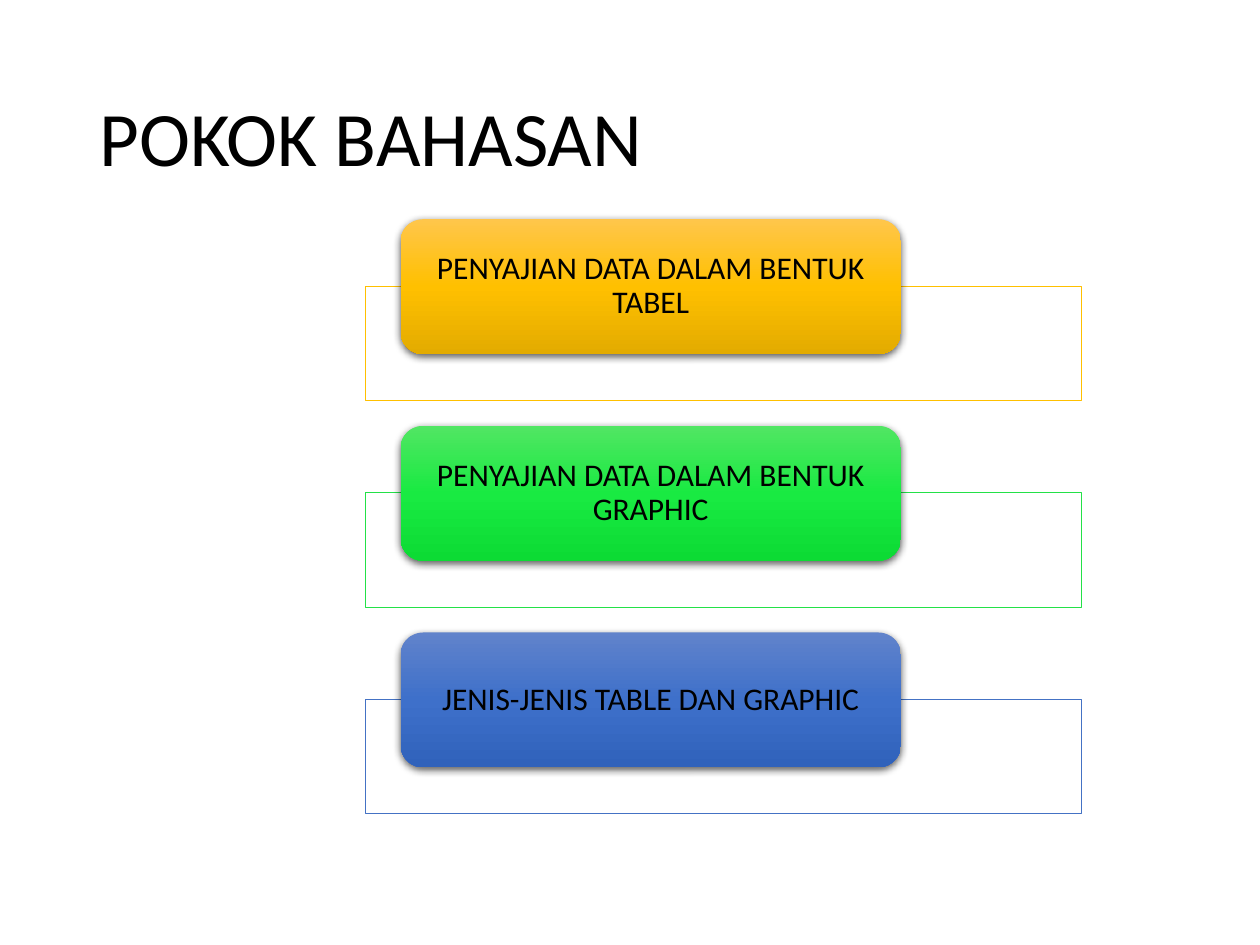
from lxml import etree
from pptx import Presentation
from pptx.dml.color import RGBColor
from pptx.enum.shapes import MSO_SHAPE
from pptx.enum.text import MSO_ANCHOR, PP_ALIGN
from pptx.oxml.ns import qn
from pptx.util import Inches, Pt

RECTANGLE = MSO_SHAPE.RECTANGLE
ROUNDED = MSO_SHAPE.ROUNDED_RECTANGLE
MIDDLE = MSO_ANCHOR.MIDDLE
LEFT, CENTER = PP_ALIGN.LEFT, PP_ALIGN.CENTER

TOPICS = [
    ("PENYAJIAN DATA DALAM BENTUK TABEL", "FFC000", ["FFC64B", "FFC000", "E3AB00"]),
    ("PENYAJIAN DATA DALAM BENTUK GRAPHIC", "23E148", ["51E663", "19EA42", "0CDB34"]),
    ("JENIS-JENIS TABLE DAN GRAPHIC", "4472C4", ["6183CB", "3E70CA", "3062BB"]),
]
FIRST_TOP, STEP = 1.74, 1.64


def color(value):
    return RGBColor.from_string(value)


def write(shape, text, size, align, margin_x, margin_y):
    frame = shape.text_frame
    frame.word_wrap = True
    frame.vertical_anchor = MIDDLE
    frame.margin_left = frame.margin_right = Inches(margin_x)
    frame.margin_top = frame.margin_bottom = Inches(margin_y)
    frame.text = text
    paragraph = frame.paragraphs[0]
    paragraph.alignment = align
    paragraph.line_spacing = 0.9
    font = paragraph.runs[0].font
    font.name = "Calibri"
    font.size = Pt(size)
    font.color.rgb = color("000000")


presentation = Presentation()
presentation.slide_width = Inches(10)
presentation.slide_height = Inches(7.5)
slide = presentation.slides.add_slide(presentation.slide_layouts[5])

title = slide.shapes.title
title.left, title.top = Inches(0.69), Inches(0.4)
title.width, title.height = Inches(8.62), Inches(1.45)
write(title, "POKOK BAHASAN", size=44, align=LEFT, margin_x=0.1, margin_y=0.05)

for index, (text, outline, gradient) in enumerate(TOPICS):
    top = FIRST_TOP + index * STEP

    frame_box = slide.shapes.add_shape(
        RECTANGLE, Inches(2.9), Inches(top + 0.53), Inches(5.68), Inches(0.91))
    frame_box.shadow.inherit = False
    frame_box.fill.solid()
    frame_box.fill.fore_color.rgb = color("FFFFFF")
    fill_color = frame_box._element.spPr.find(qn("a:solidFill"))[0]
    etree.SubElement(fill_color, qn("a:alpha"), val="90000")
    frame_box.line.color.rgb = color(outline)
    frame_box.line.width = Pt(0.5)

    label = slide.shapes.add_shape(
        ROUNDED, Inches(3.18), Inches(top), Inches(3.97), Inches(1.07))
    label.line.fill.background()
    label.fill.gradient()
    label.fill.gradient_angle = 270
    properties = label._element.spPr
    stops = properties.find(qn("a:gradFill")).find(qn("a:gsLst"))
    for stop in list(stops):
        stops.remove(stop)
    for position, stop_color in zip((0, 50000, 100000), gradient):
        stop = etree.SubElement(stops, qn("a:gs"), pos=str(position))
        etree.SubElement(stop, qn("a:srgbClr"), val=stop_color)

    label.shadow.inherit = False
    shadow = etree.SubElement(
        properties.find(qn("a:effectLst")), qn("a:outerShdw"),
        blurRad=str(Pt(4.5)), dist=str(Pt(1.5)), dir="5400000",
        algn="ctr", rotWithShape="0")
    shadow_color = etree.SubElement(shadow, qn("a:srgbClr"), val="000000")
    etree.SubElement(shadow_color, qn("a:alpha"), val="63000")

    write(label, text, size=18, align=CENTER, margin_x=0.15, margin_y=0)

presentation.save("out.pptx")
